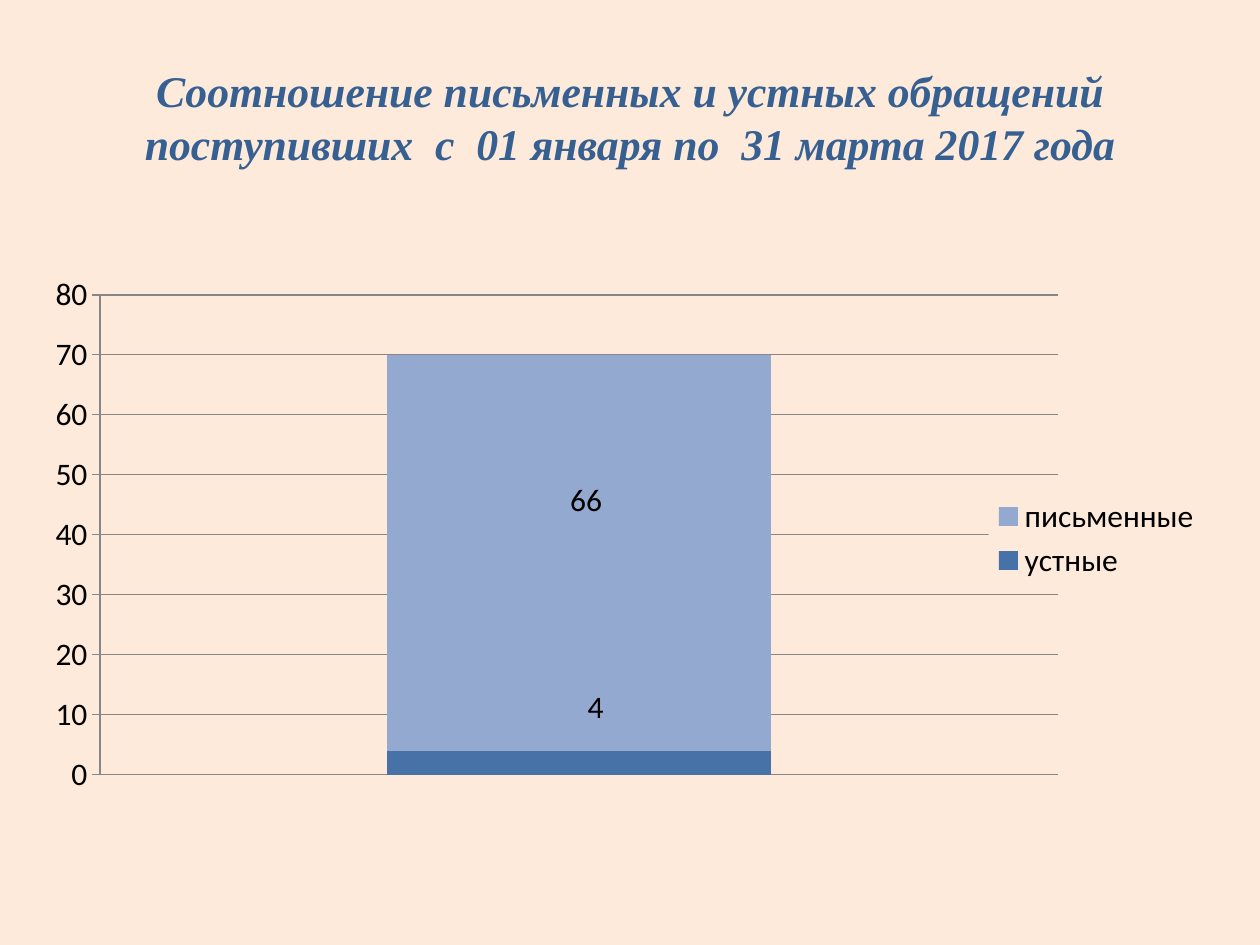
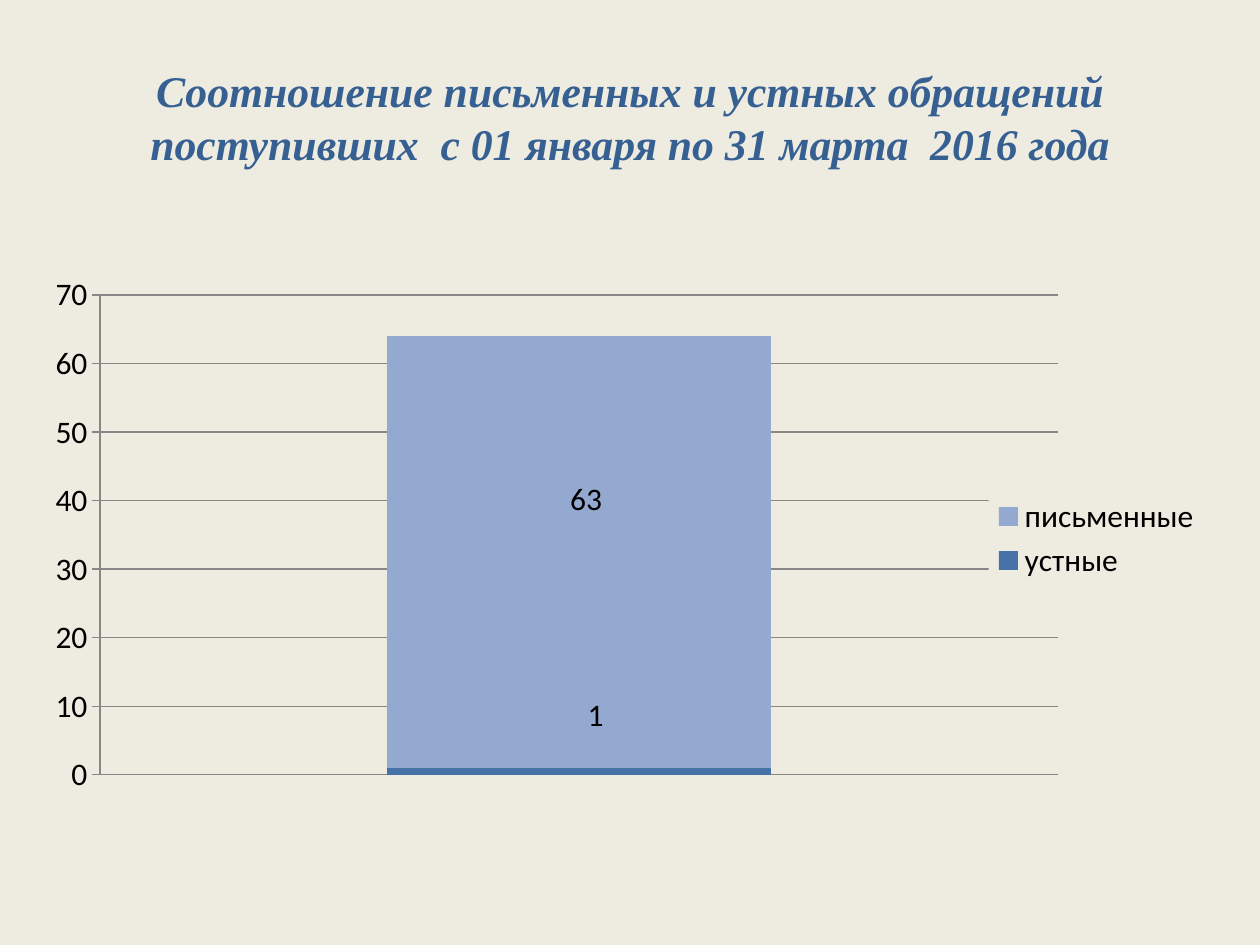
from dataclasses import dataclass

from lxml.etree import SubElement
from pptx import Presentation
from pptx.chart.data import CategoryChartData
from pptx.dml.color import RGBColor
from pptx.enum.chart import XL_CHART_TYPE as ChartType
from pptx.enum.chart import XL_LEGEND_POSITION as LegendPosition
from pptx.enum.chart import XL_TICK_MARK as TickMark
from pptx.enum.text import MSO_ANCHOR as Anchor
from pptx.enum.text import PP_ALIGN as Align
from pptx.oxml.ns import qn
from pptx.util import Pt

TITLE_COLOR = "376092"
TEXT_COLOR = "000000"
LINE_COLOR = "878787"


@dataclass(frozen=True)
class SeriesStyle:
    """Look of one series; the label shift is in percent of the chart's size."""

    name: str
    color: str
    label_shift: tuple[float, float]


@dataclass(frozen=True)
class Period:
    title: str
    background: str
    oral: int
    written: int
    axis_maximum: int


ORAL = SeriesStyle("устные", "4672A8", (1.4, -10.3))
WRITTEN = SeriesStyle("письменные", "93A9CF", (0.6, -9.7))

PERIODS = (
    Period(
        "Соотношение письменных и устных обращений "
        "поступивших  с  01 января по  31 марта 2017 года",
        "FDEADA", oral=4, written=66, axis_maximum=80,
    ),
    Period(
        "Соотношение письменных и устных обращений\v"
        "поступивших  с 01 января по 31 марта  2016 года",
        "EEECE1", oral=1, written=63, axis_maximum=70,
    ),
)


def rgb(color: str) -> RGBColor:
    return RGBColor.from_string(color)


def set_layout(parent, position: int, modes: dict[str, str], **percents: float) -> None:
    """Place a chart part by hand; the layout becomes child number `position`."""
    for old in parent.findall(qn("c:layout")):
        parent.remove(old)
    layout = SubElement(parent, qn("c:layout"))
    manual = SubElement(layout, qn("c:manualLayout"))
    fractions = {tag: f"{percent / 100:.3f}" for tag, percent in percents.items()}
    for tag, value in (modes | fractions).items():
        SubElement(manual, qn(f"c:{tag}")).set("val", value)
    parent.insert(position, layout)


def hide_leader_lines(labels) -> None:
    element = labels._element
    for old in element.findall(qn("c:showLeaderLines")):
        element.remove(old)
    SubElement(element, qn("c:showLeaderLines")).set("val", "0")


def add_title(slide, text: str) -> None:
    box = slide.shapes.add_textbox(Pt(36), Pt(21.6), Pt(648), Pt(90))
    frame = box.text_frame
    frame.word_wrap = True
    frame.vertical_anchor = Anchor.MIDDLE
    para = frame.paragraphs[0]
    para.text = text
    para.alignment = Align.CENTER
    font = para.font
    font.name, font.size = "Times New Roman", Pt(25)
    font.bold = font.italic = True
    font.color.rgb = rgb(TITLE_COLOR)


def style_axes(chart, maximum: int) -> None:
    chart.category_axis.visible = False
    axis = chart.value_axis
    axis.minimum_scale, axis.maximum_scale, axis.major_unit = 0, maximum, 10
    axis.major_tick_mark = TickMark.OUTSIDE
    axis.minor_tick_mark = TickMark.NONE
    axis.has_major_gridlines = True
    for line in (axis.format.line, axis.major_gridlines.format.line):
        line.color.rgb = rgb(LINE_COLOR)
        line.width = Pt(0.75)


def style_series(series, style: SeriesStyle) -> None:
    fill = series.format.fill
    fill.solid()
    fill.fore_color.rgb = rgb(style.color)
    series.invert_if_negative = False
    labels = series.data_labels
    labels.show_value = True
    hide_leader_lines(labels)
    point_label = labels._element.get_or_add_dLbl_for_point(0)
    shift_x, shift_y = style.label_shift
    set_layout(point_label, 1, {}, x=shift_x, y=shift_y)


def add_legend(chart, background: str) -> None:
    """Add a legend whose fill keeps the gridlines from crossing its text."""
    chart.has_legend = True
    legend = chart.legend
    legend.position = LegendPosition.RIGHT
    legend.include_in_layout = False
    element = legend._element
    set_layout(element, 1, {"xMode": "edge", "yMode": "edge"}, x=81.2, y=39)
    properties = SubElement(element, qn("c:spPr"))
    fill = SubElement(properties, qn("a:solidFill"))
    SubElement(fill, qn("a:srgbClr")).set("val", background)
    element.find(qn("c:overlay")).addnext(properties)


def add_appeals_chart(slide, period: Period) -> None:
    data = CategoryChartData()
    data.categories = ["1"]
    data.add_series(ORAL.name, [period.oral])
    data.add_series(WRITTEN.name, [period.written])
    frame = slide.shapes.add_chart(
        ChartType.COLUMN_STACKED, Pt(16.56), Pt(157.68), Pt(675.36), Pt(311.76), data
    )
    chart = frame.chart
    chart.has_title = False
    chart.font.name, chart.font.size = "Calibri", Pt(18)
    chart.font.color.rgb = rgb(TEXT_COLOR)
    style_axes(chart, period.axis_maximum)

    plot = chart.plots[0]
    plot.gap_width, plot.overlap = 150, 100
    plot.vary_by_categories = False
    for series, style in zip(plot.series, (ORAL, WRITTEN)):
        style_series(series, style)

    add_legend(chart, period.background)
    plot_area = chart._chartSpace.chart.plotArea
    modes = {"layoutTarget": "inner", "xMode": "edge", "yMode": "edge"}
    set_layout(plot_area, 0, modes, x=6, y=2.7, w=81.1, h=88.7)


def main() -> None:
    deck = Presentation()
    deck.slide_width, deck.slide_height = Pt(720), Pt(540)
    blank = deck.slide_layouts[6]
    for period in PERIODS:
        slide = deck.slides.add_slide(blank)
        background = slide.background.fill
        background.solid()
        background.fore_color.rgb = rgb(period.background)
        add_title(slide, period.title)
        add_appeals_chart(slide, period)
    deck.save("out.pptx")


if __name__ == "__main__":
    main()
